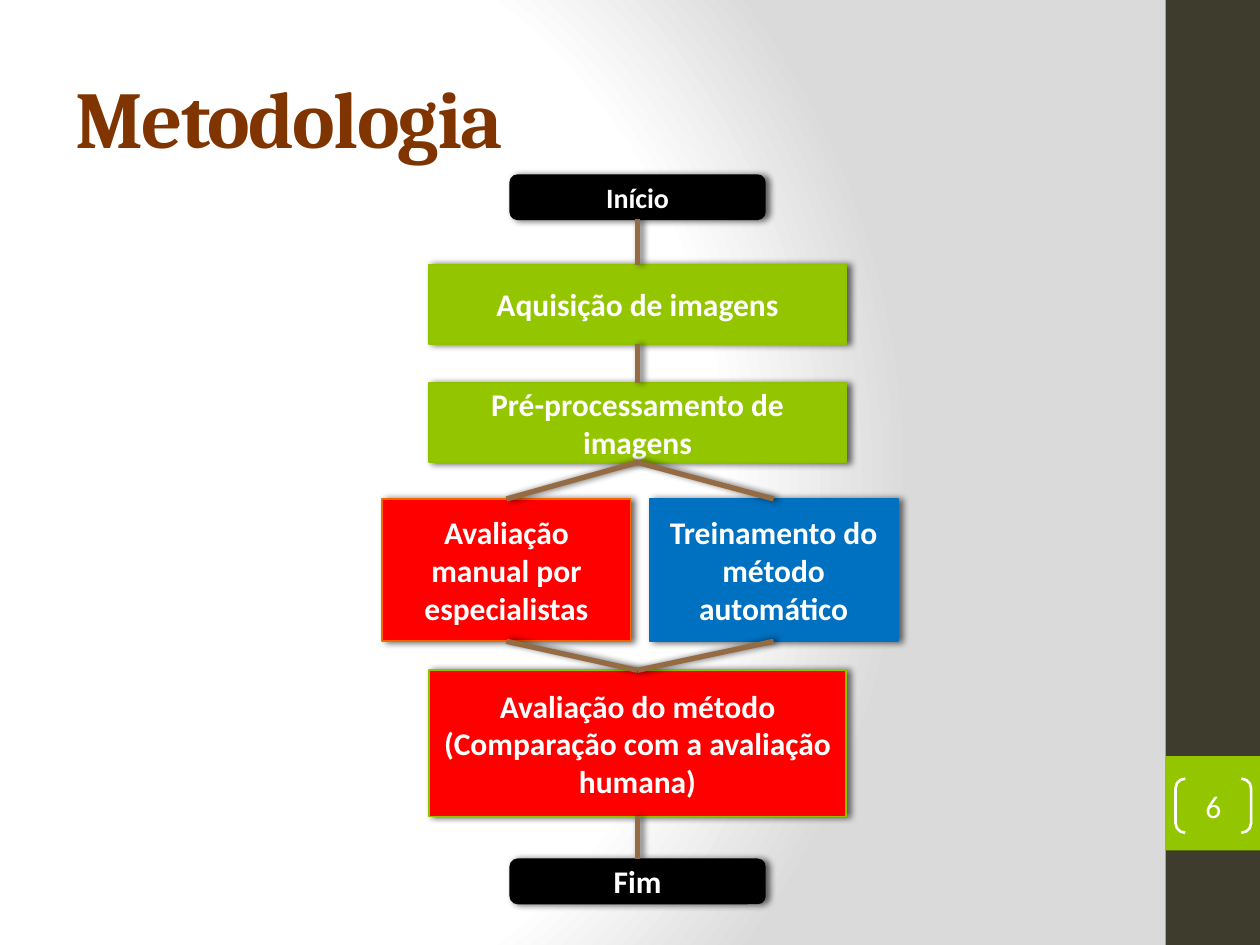
from pptx import Presentation
from pptx.dml.color import RGBColor
from pptx.enum.shapes import MSO_CONNECTOR, MSO_SHAPE
from pptx.enum.text import MSO_ANCHOR, PP_ALIGN
from pptx.oxml import parse_xml
from pptx.oxml.ns import nsdecls
from pptx.util import Inches, Pt

COLORS = {
    "white": "FFFFFF", "grey": "DADADA", "black": "000000", "olive": "3E3D2D",
    "green": "94C600", "green_edge": "91C200", "red": "FF0000",
    "orange": "F96500", "blue": "0070C0", "brown": "956B43", "title": "803400",
}
TOP, BOTTOM = 0, 2
CENTER = 5.06


def rgb(name):
    return RGBColor.from_string(COLORS[name])


class FlowSlide:
    """Holds the style and the slide being drawn."""

    text_style = {"name": "Calibri", "size": Pt(18), "bold": True}
    title_style = {"name": "Cambria", "size": Pt(46), "bold": True}

    def __init__(self, presentation):
        self.slide = presentation.slides.add_slide(presentation.slide_layouts[5])
        self.shapes = self.slide.shapes

    def background(self):
        self.slide.background.fill.solid()
        properties = self.slide.element.xpath("p:cSld/p:bg/p:bgPr")[0]
        stops = "".join(
            f'<a:gs pos="{position * 1000}"><a:srgbClr val="{COLORS[color]}"/></a:gs>'
            for position, color in ((0, "white"), (75, "white"), (100, "grey")))
        properties.replace(properties[0], parse_xml(
            f'<a:gradFill {nsdecls("a")} rotWithShape="1"><a:gsLst>{stops}</a:gsLst>'
            '<a:path path="circle"><a:fillToRect l="20000" t="50000" r="100000" b="50000"/>'
            '</a:path></a:gradFill>'))

    def set_text(self, shape, text, color, style, align=PP_ALIGN.CENTER):
        frame = shape.text_frame
        frame.word_wrap = True
        frame.vertical_anchor = MSO_ANCHOR.MIDDLE
        paragraph = frame.paragraphs[0]
        paragraph.alignment = align
        run = paragraph.add_run()
        run.text = text
        for name, value in style.items():
            setattr(run.font, name, value)
        run.font.color.rgb = rgb(color)

    def title(self, text, *box):
        title = self.shapes.title
        title.left, title.top, title.width, title.height = map(Inches, box)
        self.set_text(title, text, "title", self.title_style, PP_ALIGN.LEFT)
        title.element.xpath(".//a:rPr")[0].set("spc", "-100")

    def shape(self, kind, box, fill=None, edge=None, width=1):
        shape = self.shapes.add_shape(kind, *map(Inches, box))
        shape.shadow.inherit = False
        if fill:
            shape.fill.solid()
            shape.fill.fore_color.rgb = rgb(fill)
        else:
            shape.fill.background()
        if edge:
            shape.line.color.rgb = rgb(edge)
            shape.line.width = Pt(width)
        else:
            shape.line.fill.background()
        return shape

    def cast_shadow(self, shape):
        properties = shape.element.spPr
        for effects in properties.xpath("a:effectLst"):
            properties.remove(effects)
        properties.append(parse_xml(
            f'<a:effectLst {nsdecls("a")}><a:outerShdw blurRad="{Pt(4)}" dist="{Pt(2)}" '
            f'dir="0" rotWithShape="0"><a:srgbClr val="{COLORS["black"]}">'
            '<a:alpha val="60000"/></a:srgbClr></a:outerShdw></a:effectLst>'))

    def step(self, text, top, width, height, fill, edge, center=CENTER,
             kind=MSO_SHAPE.RECTANGLE, size=18):
        box = (center - width / 2, top, width, height)
        shape = self.shape(kind, box, fill, edge)
        self.cast_shadow(shape)
        self.set_text(shape, text, "white", {**self.text_style, "size": Pt(size)})
        return shape

    def terminal(self, text, top, size):
        return self.step(text, top, 2.02, 0.35, "black", "black",
                         kind=MSO_SHAPE.ROUNDED_RECTANGLE, size=size)

    def connect(self, upper, lower):
        line = self.shapes.add_connector(MSO_CONNECTOR.STRAIGHT, 0, 0, 0, 0)
        line.begin_connect(upper, BOTTOM)
        line.end_connect(lower, TOP)
        line.line.color.rgb = rgb("brown")
        line.line.width = Pt(3)
        self.cast_shadow(line)

    def page_number(self, text, *box):
        bracket = self.shape(MSO_SHAPE.DOUBLE_BRACKET, box, edge="white", width=1.5)
        bracket.adjustments[0] = 0.18
        for side in ("left", "top", "right", "bottom"):
            setattr(bracket.text_frame, f"margin_{side}", 0)
        self.set_text(bracket, text, "white", {**self.text_style, "bold": False})


def main():
    presentation = Presentation()
    presentation.slide_width, presentation.slide_height = Inches(10), Inches(7.5)
    flow = FlowSlide(presentation)
    flow.background()
    flow.shape(MSO_SHAPE.RECTANGLE, (9.25, 0, 0.75, 7.5), "olive")
    flow.shape(MSO_SHAPE.RECTANGLE, (9.25, 6, 0.75, 0.75), "green")
    flow.title("Metodologia", 0.5, 0.3, 8.33, 1.25)
    flow.page_number("6", 9.33, 6.18, 0.6, 0.43)

    start = flow.terminal("Início", 1.39, 16)
    end = flow.terminal("Fim", 6.82, 18)
    acquisition, preprocessing = [
        flow.step(text, top, 3.31, 0.63, "green", "green_edge")
        for text, top in (("Aquisição de imagens", 2.1),
                          ("Pré-processamento de imagens", 3.04))]
    manual, training = [
        flow.step(text, 3.96, 1.97, 1.13, fill, edge, center)
        for text, fill, edge, center in (
            ("Avaliação manual por especialistas", "red", "orange", 4.02),
            ("Treinamento do método automático", "blue", "blue", 6.14))]
    evaluation = flow.step("Avaliação do método (Comparação com a avaliação humana)",
                           5.32, 3.31, 1.16, "red", "green_edge")

    for upper, lower in (
            (start, acquisition), (acquisition, preprocessing),
            (preprocessing, manual), (preprocessing, training),
            (manual, evaluation), (training, evaluation), (evaluation, end)):
        flow.connect(upper, lower)
    presentation.save("out.pptx")


if __name__ == "__main__":
    main()
